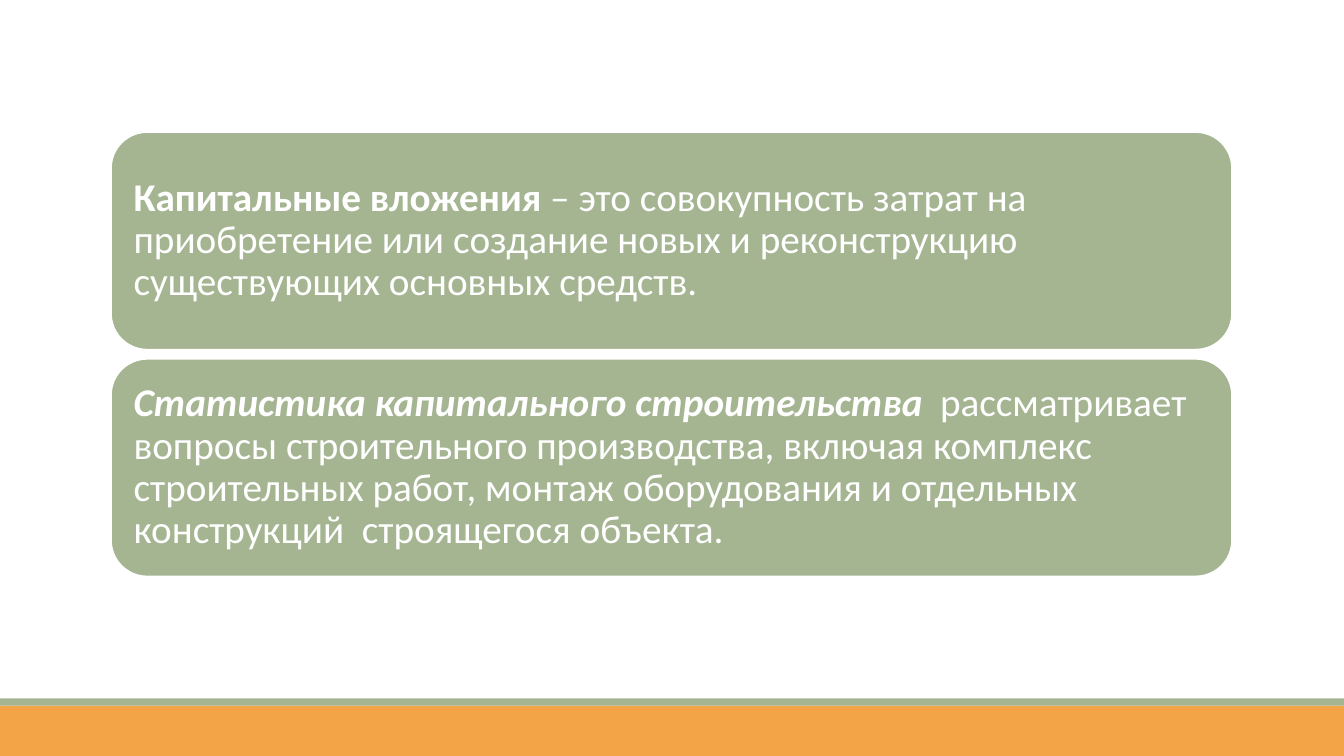
from dataclasses import dataclass

from pptx import Presentation
from pptx.dml.color import RGBColor
from pptx.enum.shapes import MSO_SHAPE
from pptx.enum.text import MSO_ANCHOR, PP_ALIGN
from pptx.shapes.autoshape import Shape
from pptx.slide import Slide
from pptx.util import Inches, Pt

RECTANGLE = MSO_SHAPE.RECTANGLE
ROUNDED = MSO_SHAPE.ROUNDED_RECTANGLE
MIDDLE = MSO_ANCHOR.MIDDLE
LEFT = PP_ALIGN.LEFT


@dataclass(frozen=True)
class Theme:
    orange: RGBColor = RGBColor(0xF3, 0xA4, 0x47)
    green: RGBColor = RGBColor(0xA5, 0xB5, 0x92)
    white: RGBColor = RGBColor(0xFF, 0xFF, 0xFF)
    font: str = "Calibri"
    body_size: float = 28
    outline: float = 1.25


@dataclass(frozen=True)
class Band:
    top: float
    height: float
    color: RGBColor


@dataclass(frozen=True)
class Definition:
    term: str
    meaning: str
    italic_term: bool = False


THEME = Theme()
PAGE_WIDTH = 13.33
PAGE_HEIGHT = 7.5
CARD_LEFT = 1.1
CARD_TOP = 1.31
CARD_WIDTH = 11.12
CARD_HEIGHT = 2.16
CARD_PITCH = 2.25
CARD_INSET = 0.12

BANDS = [
    Band(7, 0.5, THEME.orange),
    Band(6.93, 0.07, THEME.green),
]

DEFINITIONS = [
    Definition(
        "Капитальные вложения",
        " – это совокупность затрат на приобретение или создание новых "
        "и реконструкцию существующих основных средств.",
    ),
    Definition(
        "Статистика капитального строительства ",
        " рассматривает вопросы строительного производства, включая комплекс  "
        "строительных работ, монтаж оборудования и отдельных конструкций  "
        "строящегося объекта.",
        italic_term=True,
    ),
]


def add_box(page: Slide, kind: MSO_SHAPE, left: float, top: float,
            width: float, height: float, color: RGBColor) -> Shape:
    box = page.shapes.add_shape(
        kind, Inches(left), Inches(top), Inches(width), Inches(height))
    box.shadow.inherit = False
    box.fill.solid()
    box.fill.fore_color.rgb = color
    box.line.fill.background()
    return box


def add_band(page: Slide, band: Band) -> None:
    add_box(page, RECTANGLE, 0, band.top, PAGE_WIDTH, band.height, band.color)


def add_definition(page: Slide, definition: Definition, top: float) -> None:
    box = add_box(page, ROUNDED, CARD_LEFT, top, CARD_WIDTH, CARD_HEIGHT, THEME.green)
    box.line.color.rgb = THEME.white
    box.line.width = Pt(THEME.outline)

    frame = box.text_frame
    frame.word_wrap = True
    frame.vertical_anchor = MIDDLE
    frame.margin_left = frame.margin_right = Inches(CARD_INSET)
    frame.margin_top = frame.margin_bottom = Inches(CARD_INSET)

    para = frame.paragraphs[0]
    para.alignment = LEFT
    para.line_spacing = 0.9
    for text, bold, italic in (
        (definition.term, True, definition.italic_term),
        (definition.meaning, False, False),
    ):
        span = para.add_run()
        span.text = text
        span.font.name = THEME.font
        span.font.size = Pt(THEME.body_size)
        span.font.color.rgb = THEME.white
        span.font.bold = bold
        span.font.italic = italic


def main() -> None:
    deck = Presentation()
    deck.slide_width = Inches(PAGE_WIDTH)
    deck.slide_height = Inches(PAGE_HEIGHT)
    page = deck.slides.add_slide(deck.slide_layouts[6])
    for band in BANDS:
        add_band(page, band)
    for index, definition in enumerate(DEFINITIONS):
        add_definition(page, definition, CARD_TOP + index * CARD_PITCH)
    deck.save("out.pptx")


if __name__ == "__main__":
    main()
